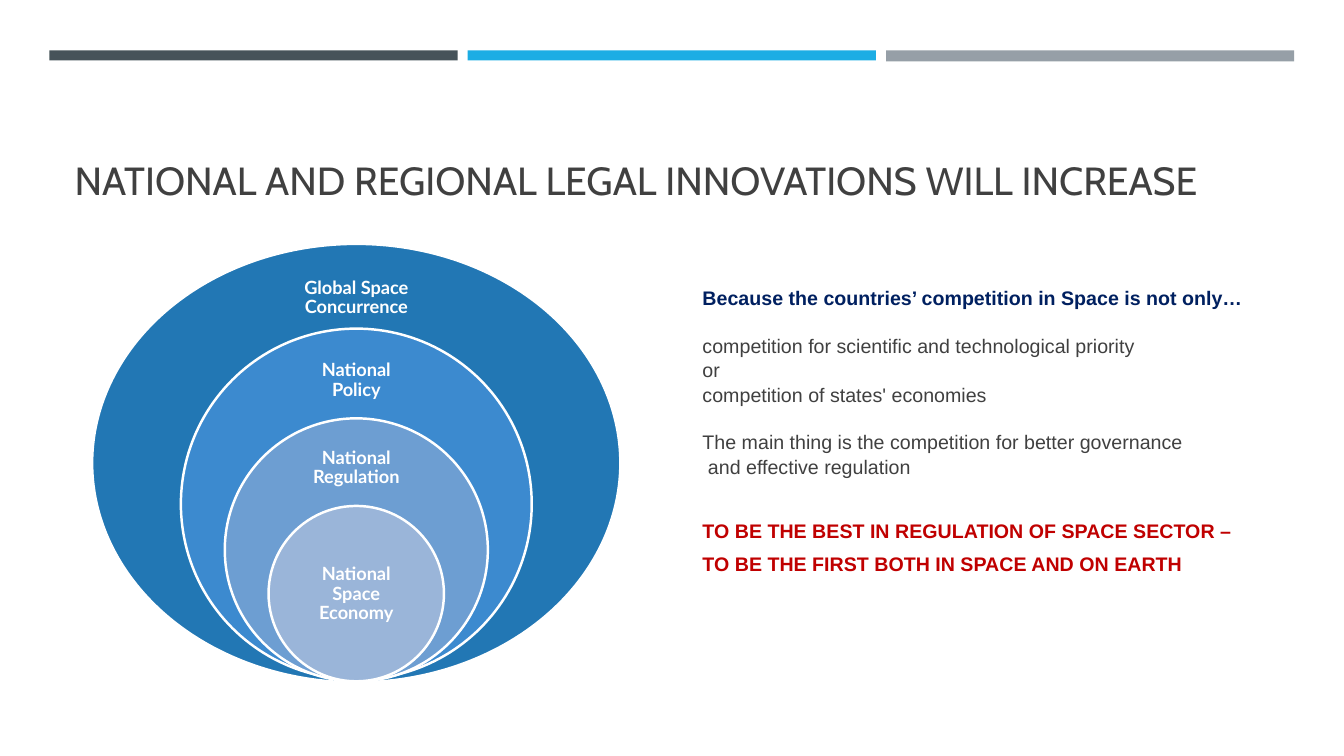
from pptx import Presentation
from pptx.dml.color import RGBColor
from pptx.enum.shapes import MSO_SHAPE
from pptx.enum.text import MSO_ANCHOR, MSO_AUTO_SIZE, PP_ALIGN
from pptx.util import Pt

BARS = [(35.3, 7.2, "465359"), (334.1, 7.2, "1CADE4"), (632.9, 7.9, "969FA7")]

RING_CENTER = 254.5
RINGS = [
    ("Global Space Concurrence", 377.3, 313.2, 487.4, "2277B4", 189.4, 106, 46.8),
    ("National Policy", 250.6, 250.6, 485.3, "3C8ACF", 249.1, 87.1, 45.4),
    ("National Regulation", 187.9, 187.9, 486.7, "6D9ED2", 313.2, 87.1, 42.5),
    ("National Space Economy", 125.3, 125.3, 486.7, "9AB5D9", 393.1, 88.6, 62.6),
]

NAVY, GRAY, RED = "002060", "404040", "C00000"
STATEMENTS = [
    ("Because the countries’ competition in Space is not only…", NAVY, True, 0),
    ("competition for scientific and technological priority", GRAY, False, 16.7),
    ("or", GRAY, False, 0),
    ("competition of states' economies", GRAY, False, 0),
    ("The main thing is the competition for better governance", GRAY, False, 16.7),
    (" and effective regulation", GRAY, False, 0),
    ("TO BE THE BEST IN REGULATION OF SPACE SECTOR –", RED, True, 28.2),
    ("TO BE THE FIRST BOTH IN SPACE AND ON EARTH", RED, True, 6),
]


def color(value):
    return RGBColor.from_string(value)


class SlideBuilder:
    title_font = "Cabin"
    body_font = "Arial"
    label_font = "Lato"

    def __init__(self, page):
        self.page = page

    def place(self, box, left, top, width, height):
        box.left, box.top = Pt(left), Pt(top)
        box.width, box.height = Pt(width), Pt(height)

    def style(self, para, name, size, shade, bold=False):
        para.font.name = name
        para.font.size = Pt(size)
        para.font.bold = bold
        para.font.color.rgb = color(shade)

    def frame(self, box, anchor):
        frame = box.text_frame
        frame.word_wrap = True
        frame.auto_size = MSO_AUTO_SIZE.NONE
        frame.vertical_anchor = anchor
        return frame

    def shape(self, kind, left, top, width, height, fill, outline=None):
        shape = self.page.shapes.add_shape(
            kind, Pt(left), Pt(top), Pt(width), Pt(height))
        shape.shadow.inherit = False
        shape.fill.solid()
        shape.fill.fore_color.rgb = color(fill)
        if outline:
            shape.line.color.rgb = color(outline)
            shape.line.width = Pt(1.75)
        else:
            shape.line.fill.background()

    def title(self, text):
        box = self.page.shapes.title
        self.place(box, 46.1, 55.4, 868.3, 93.6)
        para = self.frame(box, MSO_ANCHOR.BOTTOM).paragraphs[0]
        para.text = text
        para.alignment = PP_ALIGN.LEFT
        self.style(para, self.title_font, 28, GRAY)

    def body(self, statements):
        box = self.page.placeholders[1]
        self.place(box, 494.6, 164.2, 434.2, 285.8)
        frame = self.frame(box, MSO_ANCHOR.MIDDLE)
        for index, (text, shade, bold, before) in enumerate(statements):
            para = frame.add_paragraph() if index else frame.paragraphs[0]
            para.text = text
            para.line_spacing = 1.04
            para.space_before, para.space_after = Pt(before), Pt(0)
            properties = para._p.get_or_add_pPr()
            properties.set("marL", "0")
            properties.set("indent", "0")
            properties.insert_element_before(
                properties.makeelement(
                    "{http://schemas.openxmlformats.org/drawingml/2006/main}buNone", {}),
                "a:tabLst", "a:defRPr", "a:extLst")
            self.style(para, self.body_font, 14, shade, bold)

    def label(self, text, center, top, width, height):
        box = self.page.shapes.add_textbox(
            Pt(center - width / 2), Pt(top), Pt(width), Pt(height))
        frame = self.frame(box, MSO_ANCHOR.MIDDLE)
        frame.margin_left = frame.margin_right = Pt(7.2)
        frame.margin_top = frame.margin_bottom = Pt(7.2)
        para = frame.paragraphs[0]
        para.text = text
        para.alignment = PP_ALIGN.CENTER
        para.line_spacing = 0.9
        self.style(para, self.label_font, 13, "FFFFFF", True)

    def ring(self, text, width, height, bottom, fill, label_top, label_width, label_height):
        self.shape(MSO_SHAPE.OVAL, RING_CENTER - width / 2, bottom - height,
                   width, height, fill, "FFFFFF")
        self.label(text, RING_CENTER, label_top, label_width, label_height)


def main():
    deck = Presentation()
    deck.slide_width, deck.slide_height = Pt(960), Pt(540)
    builder = SlideBuilder(deck.slides.add_slide(deck.slide_layouts[1]))
    for left, height, fill in BARS:
        builder.shape(MSO_SHAPE.RECTANGLE, left, 36, 291.6, height, fill)
    builder.title("NATIONAL AND REGIONAL LEGAL INNOVATIONS WILL INCREASE")
    builder.body(STATEMENTS)
    for ring in RINGS:
        builder.ring(*ring)
    deck.save("out.pptx")


if __name__ == "__main__":
    main()
